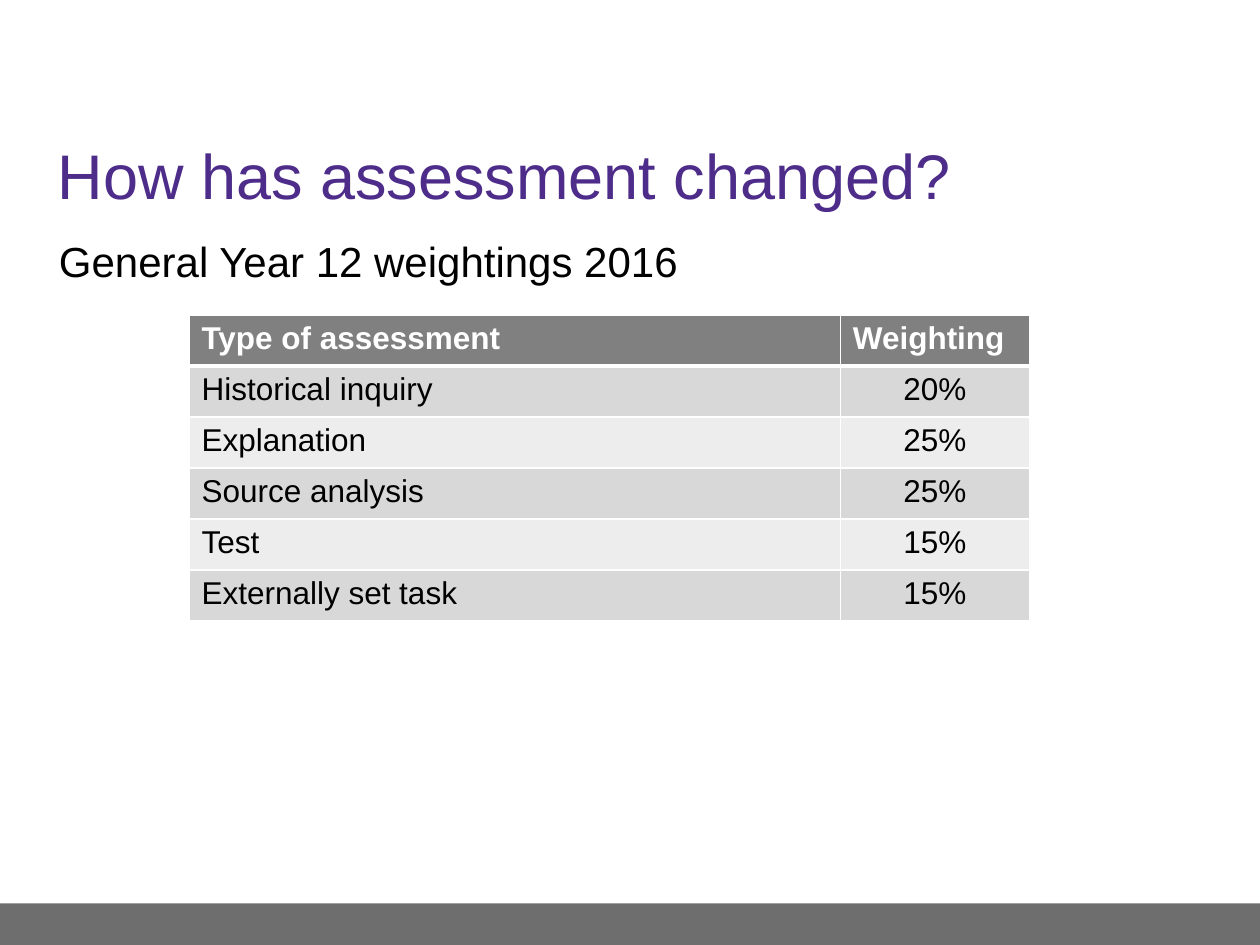
import pptx
import pptx.util
import pptx.dml.color
import pptx.enum.shapes
import pptx.enum.text
import pptx.oxml
import pptx.oxml.ns

Inches, Pt = pptx.util.Inches, pptx.util.Pt
ALIGN = pptx.enum.text.PP_ALIGN
ANCHOR = pptx.enum.text.MSO_ANCHOR

# Content
TITLE = "How has assessment changed?"
LEAD = "General Year 12 weightings 2016"
ROWS = [
    ("Type of assessment", "Weighting"),
    ("Historical inquiry", "20%"),
    ("Explanation", "25%"),
    ("Source analysis", "25%"),
    ("Test", "15%"),
    ("Externally set task", "15%"),
]
WIDTHS = (5.17, 1.5)
ROW_H = 0.405
HEAD, BANDS = "808080", ("D8D8D8", "EDEDED")


def color(code):
    return pptx.dml.color.RGBColor.from_string(code)


def style(para, size, code, bold=False):
    font = para.font
    font.name, font.size, font.bold = "Arial", Pt(size), bold
    font.color.rgb = color(code)


def add_text(slide, box, text, size, code, anchor, top=0.05):
    frame = slide.shapes.add_textbox(*map(Inches, box)).text_frame
    frame.word_wrap = True
    frame.vertical_anchor = anchor
    frame.margin_top = Inches(top)
    frame.text = text
    style(frame.paragraphs[0], size, code)


def add_edges(cell, foot):
    """Draw white cell borders; foot is the bottom width in points."""
    props = cell._tc.get_or_add_tcPr()
    for i, (side, width) in enumerate(zip("LRTB", (1, 1, 1, foot))):
        props.insert(i, pptx.oxml.parse_xml(
            f'<a:ln{side} {pptx.oxml.ns.nsdecls("a")} w="{Pt(width)}">'
            '<a:solidFill><a:srgbClr val="FFFFFF"/></a:solidFill>'
            f'</a:ln{side}>'))


def add_grid(slide):
    table = slide.shapes.add_table(
        len(ROWS), len(WIDTHS), Inches(1.5), Inches(2.5),
        Inches(sum(WIDTHS)), Inches(ROW_H * len(ROWS))).table
    for col, width in zip(table.columns, WIDTHS):
        col.width = Inches(width)
    for r, row in enumerate(ROWS):
        table.rows[r].height = Inches(ROW_H)
        first = r == 0
        for c, text in enumerate(row):
            cell = table.cell(r, c)
            cell.text = text
            cell.fill.solid()
            cell.fill.fore_color.rgb = color(HEAD if first else BANDS[(r - 1) % 2])
            add_edges(cell, 3 if first else 1)
            para = cell.text_frame.paragraphs[0]
            style(para, 18, "FFFFFF" if first else "000000", first)
            if c and not first:
                para.alignment = ALIGN.CENTER


def main():
    deck = pptx.Presentation()
    deck.slide_width, deck.slide_height = Inches(10), Inches(7.5)
    slide = deck.slides.add_slide(deck.slide_layouts[6])

    # Footer band
    band = slide.shapes.add_shape(
        pptx.enum.shapes.MSO_SHAPE.RECTANGLE,
        Inches(0), Inches(7.17), Inches(10), Inches(0.33))
    band.shadow.inherit = False
    band.fill.solid()
    band.fill.fore_color.rgb = color("6E6E6E")
    band.line.fill.background()

    # Heading, lead line and table
    add_text(slide, (0.36, 0.92, 9.35, 0.92), TITLE, 36, "4D2C8A", ANCHOR.MIDDLE)
    add_text(slide, (0.37, 1.78, 9.33, 5.04), LEAD, 24, "000000", ANCHOR.TOP, 0.09)
    add_grid(slide)

    deck.save("out.pptx")


if __name__ == "__main__":
    main()
